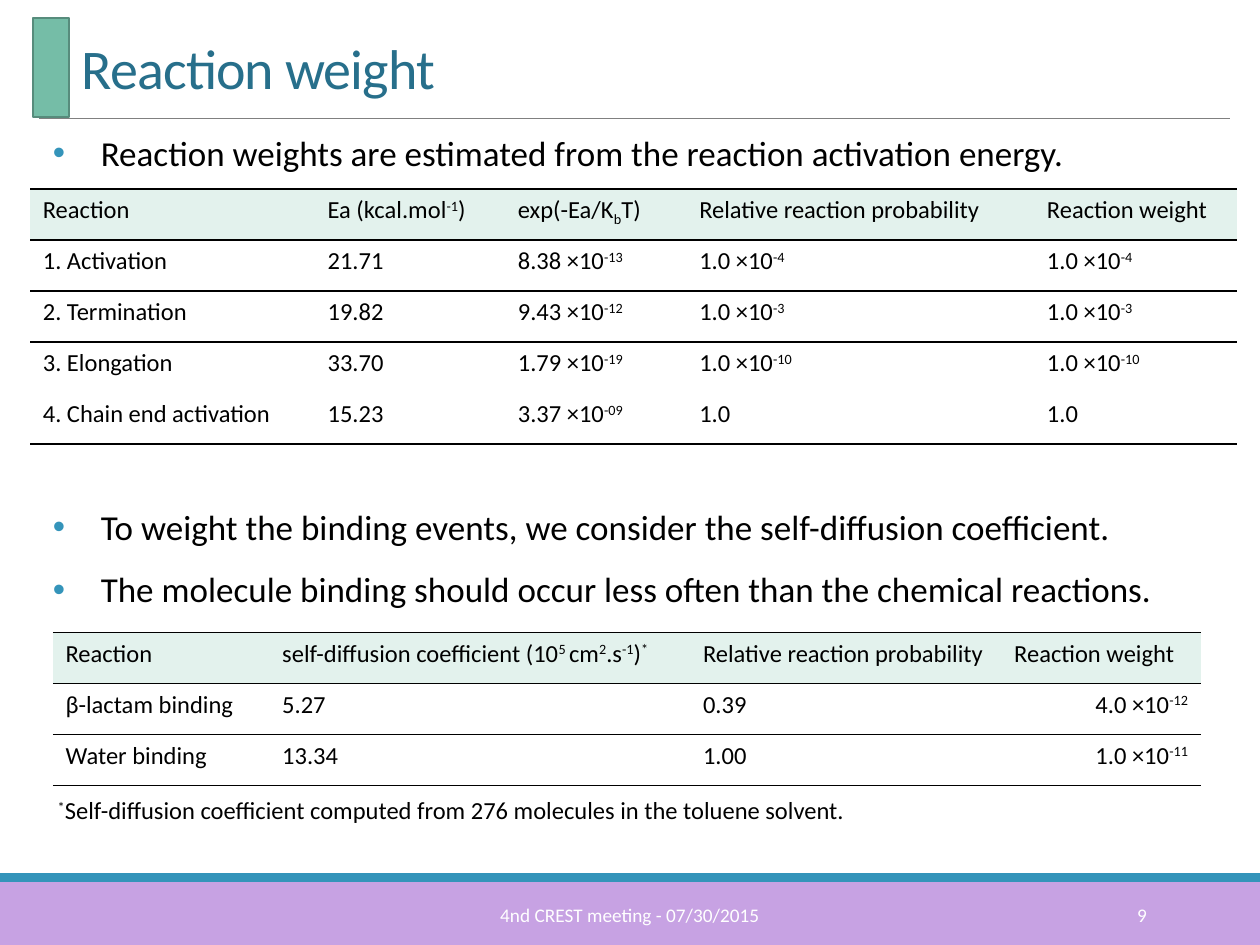
"""Build the slide on reaction weights, with two tables between bullet points."""
from lxml import etree
from pptx import Presentation
from pptx.dml.color import RGBColor
from pptx.enum.shapes import MSO_CONNECTOR, MSO_SHAPE
from pptx.enum.text import MSO_ANCHOR, MSO_AUTO_SIZE, PP_ALIGN
from pptx.oxml import parse_xml
from pptx.oxml.ns import nsdecls, qn
from pptx.util import Inches, Pt

LEFT, RIGHT, CENTER, JUSTIFY = PP_ALIGN.LEFT, PP_ALIGN.RIGHT, PP_ALIGN.CENTER, PP_ALIGN.JUSTIFY
TOP, MIDDLE, BOTTOM = MSO_ANCHOR.TOP, MSO_ANCHOR.MIDDLE, MSO_ANCHOR.BOTTOM
PLAIN_TABLE = "{2D5ABB26-0587-4C30-8999-92F81FD0307C}"
BLACK, WHITE, BLUE, MINT = "000000", "FFFFFF", "3494BA", "E3F2ED"


def color(value):
    """Turn a hex string into a colour."""
    return RGBColor.from_string(value)


def write(para, text, size, shade=BLACK, align=LEFT):
    """Write text where ^...^ is superscript and ^_...^ is subscript."""
    para.alignment = align
    for index, piece in enumerate(text.split("^")):
        if not piece:
            continue
        span = para.add_run()
        span.text = piece.lstrip("_")
        for name, value in {"name": "Calibri", "size": Pt(size), "bold": False}.items():
            setattr(span.font, name, value)
        span.font.color.rgb = color(shade)
        if index % 2:
            span.font._element.set("baseline", "-25000" if piece[0] == "_" else "30000")


deck = Presentation()
deck.slide_width, deck.slide_height = Inches(10), Inches(7.5)
page = deck.slides.add_slide(deck.slide_layouts[1])
title, body = page.placeholders

bars = [
    (0, 7, 10, 0.5, "C7A2E3", None),
    (0, 6.93, 10, 0.07, BLUE, None),
    (0.26, 0.14, 0.29, 0.79, "75BDA7", "578C7C"),
]
for left, top, width, height, fill, outline in bars:
    bar = page.shapes.add_shape(
        MSO_SHAPE.RECTANGLE, Inches(left), Inches(top), Inches(width), Inches(height))
    bar.shadow.inherit = False
    bar.fill.solid()
    bar.fill.fore_color.rgb = color(fill)
    if outline:
        bar.line.color.rgb = color(outline)
        bar.line.width = Pt(1.25)
    else:
        bar.line.fill.background()

rule = page.shapes.add_connector(
    MSO_CONNECTOR.STRAIGHT, Inches(0.31), Inches(0.94), Inches(9.76), Inches(0.94))
rule.line.color.rgb = color("808080")
rule.line.width = Pt(0.5)
etree.SubElement(rule._element.spPr, qn("a:effectLst"))

placements = [
    (title, 0.55, 0.31, 8.96, 0.54, BOTTOM, 0.1),
    (body, 0.42, 1.03, 9.11, 5.92, TOP, 0),
]
for holder, left, top, width, height, anchor, inset in placements:
    places = {"left": left, "top": top, "width": width, "height": height}
    for name, value in places.items():
        setattr(holder, name, Inches(value))
    frame_format = {
        "auto_size": MSO_AUTO_SIZE.NONE, "word_wrap": True, "vertical_anchor": anchor,
        "margin_left": Inches(inset), "margin_right": Inches(inset),
    }
    for name, value in frame_format.items():
        setattr(holder.text_frame, name, value)

heading = title.text_frame.paragraphs[0]
heading.line_spacing = 0.85
write(heading, "Reaction weight", 32, "276F8B")
heading.runs[0].font._element.set("spc", "-50")

bullets = [
    ("Reaction weights are estimated from the reaction activation energy.", 0),
    ("To weight the binding events, we consider the self-diffusion coefficient.", 190),
    ("The molecule binding should occur less often than the chemical reactions.", 12),
]
for index, (text, gap) in enumerate(bullets):
    para = body.text_frame.add_paragraph() if index else body.text_frame.paragraphs[0]
    spacing = {"line_spacing": 0.9, "space_before": Pt(gap), "space_after": Pt(2)}
    for name, value in spacing.items():
        setattr(para, name, value)
    properties = para._p.get_or_add_pPr()
    properties.set("marL", str(Inches(0.38)))
    properties.set("indent", str(-Inches(0.38)))
    for markup in (
        f'<a:buClr {nsdecls("a")}><a:srgbClr val="{BLUE}"/></a:buClr>',
        f'<a:buFont {nsdecls("a")} typeface="Arial"/>',
        f'<a:buChar {nsdecls("a")} char="•"/>',
    ):
        properties.append(parse_xml(markup))
    write(para, text, 20, align=JUSTIFY)

reactions = [
    ["Reaction", "Ea (kcal.mol^-1^)", "exp(-Ea/K^_b^T)", "Relative reaction probability",
     "Reaction weight"],
    ["1. Activation", "21.71", "8.38 ×10^-13^", "1.0 ×10^-4^", "1.0 ×10^-4^"],
    ["2. Termination", "19.82", "9.43 ×10^-12^", "1.0 ×10^-3^", "1.0 ×10^-3^"],
    ["3. Elongation", "33.70", "1.79 ×10^-19^", "1.0 ×10^-10^", "1.0 ×10^-10^"],
    ["4. Chain end activation", "15.23", "3.37 ×10^-09^", "1.0", "1.0"],
]
bindings = [
    ["Reaction", "self-diffusion coefficient (10^5 ^cm^2^.s^-1^)^*^",
     "Relative reaction probability", "Reaction weight"],
    ["β-lactam binding", "5.27", "0.39", "4.0 ×10^-12^"],
    ["Water binding", "13.34", "1.00", "1.0 ×10^-11^"],
]
tables = [
    (reactions, 0.24, 1.5, [2.26, 1.51, 1.44, 2.76, 1.61], {0, 1, 2, 5}, LEFT),
    (bindings, 0.42, 5.02, [1.72, 3.34, 2.47, 1.58], {0, 1, 2, 3}, RIGHT),
]
for rows, left, top, widths, ruled, weight_align in tables:
    table = page.shapes.add_table(
        len(rows), len(widths), Inches(left), Inches(top),
        Inches(sum(widths)), Inches(0.405 * len(rows))).table
    table.first_row = table.horz_banding = False
    table._tbl.tblPr[0].text = PLAIN_TABLE
    for column, width in zip(table.columns, widths):
        column.width = Inches(width)
    for row, texts in enumerate(rows):
        for column, text in enumerate(texts):
            cell = table.cell(row, column)
            for edge, tag in ((row, "lnT"), (row + 1, "lnB")):
                if edge in ruled:
                    cell._tc.get_or_add_tcPr().append(parse_xml(
                        f'<a:{tag} {nsdecls("a")} w="{Pt(1)}"><a:solidFill>'
                        f'<a:srgbClr val="{BLACK}"/></a:solidFill></a:{tag}>'))
            if row == 0:
                cell.fill.solid()
                cell.fill.fore_color.rgb = color(MINT)
            else:
                cell.fill.background()
            is_weight = row > 0 and column == len(widths) - 1
            write(cell.text_frame.paragraphs[0], text, 14,
                  align=weight_align if is_weight else LEFT)

labels = [
    ("^*^Self-diffusion coefficient computed from 276 molecules in the toluene solvent.",
     0.36, 6.26, 8.29, 0.34, 14, BLACK, LEFT, TOP),
    ("4nd CREST meeting - 07/30/2015", 3.02, 7.06, 3.96, 0.4, 11, WHITE, CENTER, MIDDLE),
    ("9", 8.12, 7.06, 1.08, 0.4, 11, WHITE, RIGHT, MIDDLE),
]
for text, left, top, width, height, size, shade, align, anchor in labels:
    box = page.shapes.add_textbox(Inches(left), Inches(top), Inches(width), Inches(height))
    box.text_frame.word_wrap = True
    box.text_frame.vertical_anchor = anchor
    write(box.text_frame.paragraphs[0], text, size, shade, align)

deck.save("out.pptx")
